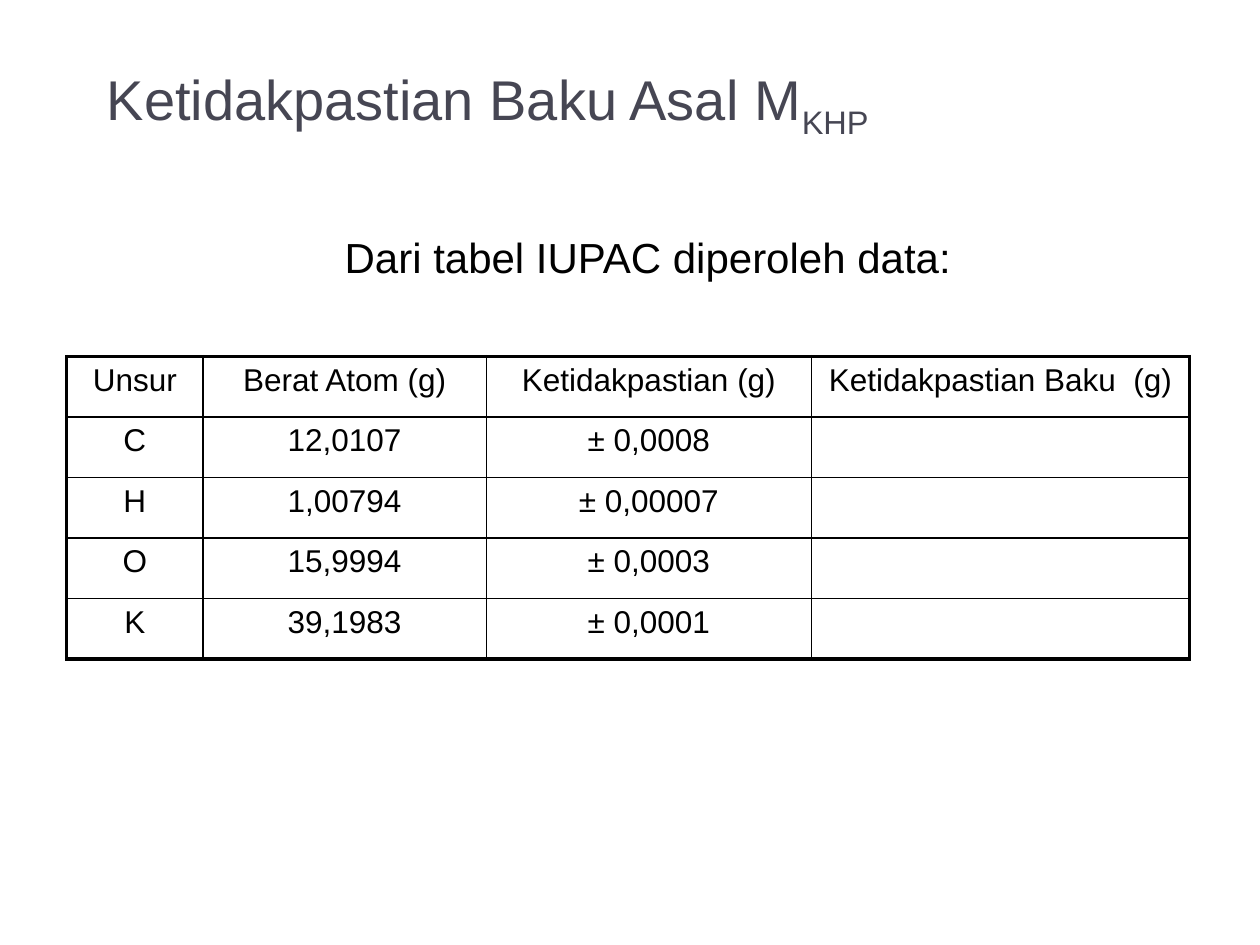
from dataclasses import dataclass

from lxml import etree
from pptx import Presentation
from pptx.dml.color import RGBColor
from pptx.enum.text import MSO_ANCHOR, PP_ALIGN
from pptx.oxml.ns import qn
from pptx.util import Inches, Pt

LEFT, CENTER = PP_ALIGN.LEFT, PP_ALIGN.CENTER
TOP, BOTTOM = MSO_ANCHOR.TOP, MSO_ANCHOR.BOTTOM


@dataclass(frozen=True)
class Theme:
    font: str = "Arial"
    title_color: str = "464653"
    text_color: str = "000000"
    border_color: str = "000000"
    title_size: float = 32
    intro_size: float = 24
    table_size: float = 18
    outer_border: float = 2.25
    inner_border: float = 1


class SlideBuilder:
    def __init__(self, slide, theme):
        self.slide = slide
        self.theme = theme

    def add_run(self, para, text, size, color, baseline=0):
        span = para.add_run()
        span.text = text
        span.font.name = self.theme.font
        span.font.size = Pt(size)
        span.font.color.rgb = RGBColor.from_string(color)
        if baseline:
            span.font._element.set("baseline", str(baseline * 1000))

    def add_text(self, left, top, width, height, align=LEFT, anchor=TOP):
        """Add a wrapping text box and return its frame and first paragraph."""
        box = self.slide.shapes.add_textbox(
            Inches(left), Inches(top), Inches(width), Inches(height))
        frame = box.text_frame
        frame.word_wrap = True
        frame.vertical_anchor = anchor
        para = frame.paragraphs[0]
        para.alignment = align
        return frame, para

    def set_border(self, cell, side, width):
        properties = cell._tc.get_or_add_tcPr()
        line = etree.SubElement(properties, qn(f"a:ln{side}"), w=str(Pt(width)))
        fill = etree.SubElement(line, qn("a:solidFill"))
        etree.SubElement(fill, qn("a:srgbClr"), val=self.theme.border_color)

    def add_table(self, left, top, column_widths, row_height, rows):
        theme = self.theme
        last_row, last_column = len(rows) - 1, len(column_widths) - 1
        table = self.slide.shapes.add_table(
            len(rows), len(column_widths), Inches(left), Inches(top),
            Inches(sum(column_widths)), Inches(row_height * len(rows))).table
        table.first_row = False
        table.horz_banding = False
        for column, width in zip(table.columns, column_widths):
            column.width = Inches(width)

        for r, values in enumerate(rows):
            table.rows[r].height = Inches(row_height)
            for c, value in enumerate(values):
                cell = table.cell(r, c)
                # Thick frame outside, thin grid inside
                outer_sides = {"L": c == 0, "R": c == last_column,
                               "T": r == 0, "B": r == last_row}
                for side, is_outer in outer_sides.items():
                    self.set_border(cell, side, theme.outer_border
                                    if is_outer else theme.inner_border)
                cell.fill.background()
                para = cell.text_frame.paragraphs[0]
                para.alignment = CENTER
                para.font.size = Pt(theme.table_size)
                if value:
                    self.add_run(para, value, theme.table_size, theme.text_color)


def main():
    theme = Theme()
    deck = Presentation()
    deck.slide_width, deck.slide_height = Inches(10), Inches(7.5)
    page = SlideBuilder(deck.slides.add_slide(deck.slide_layouts[6]), theme)

    # Title with subscript
    _, title = page.add_text(0.75, 0.5, 8.5, 0.67, anchor=BOTTOM)
    page.add_run(title, "Ketidakpastian Baku Asal M", theme.title_size, theme.title_color)
    page.add_run(title, "KHP", theme.title_size, theme.title_color, baseline=-25)

    # Introductory sentence, centred right of a 0.3 inch indent
    frame, intro = page.add_text(0.74, 1.79, 8.5, 4.17, align=CENTER)
    frame.margin_left = Inches(0.4)
    intro.space_before = Pt(6)
    page.add_run(intro, "Dari tabel IUPAC diperoleh data:", theme.intro_size, theme.text_color)

    # Atomic weights and their uncertainties
    page.add_table(0.53, 2.83, [1.08, 2.25, 2.58, 3], 0.48, [
        ["Unsur", "Berat Atom (g)", "Ketidakpastian (g)", "Ketidakpastian Baku  (g)"],
        ["C", "12,0107", "± 0,0008", ""],
        ["H", "1,00794", "± 0,00007", ""],
        ["O", "15,9994", "± 0,0003", ""],
        ["K", "39,1983", "± 0,0001", ""],
    ])

    deck.save("out.pptx")


if __name__ == "__main__":
    main()
